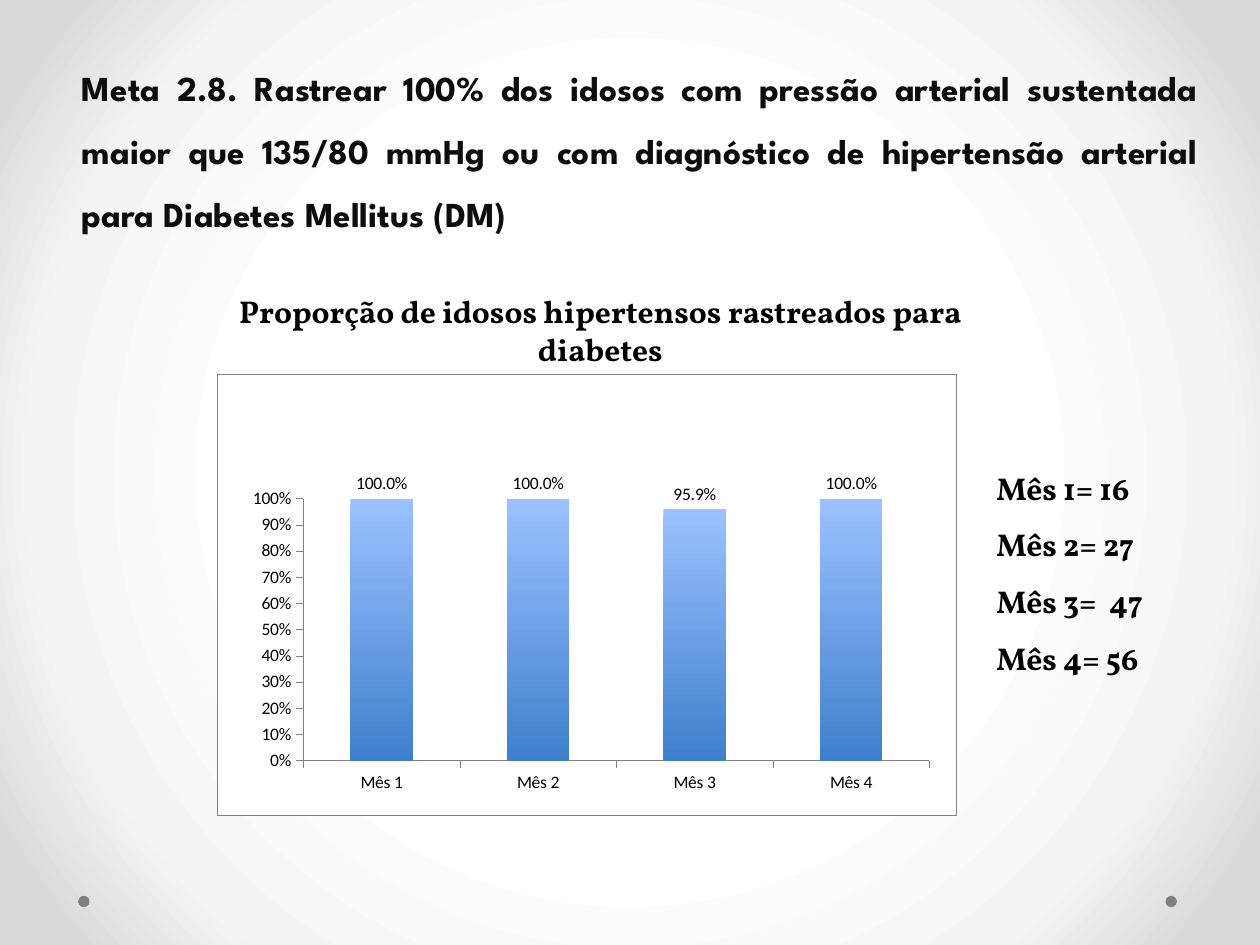
from dataclasses import dataclass
from typing import Any

from lxml import etree
from pptx import Presentation
from pptx.chart.data import CategoryChartData
from pptx.dml.color import RGBColor
from pptx.enum.chart import XL_CHART_TYPE, XL_LABEL_POSITION, XL_TICK_MARK
from pptx.enum.shapes import MSO_SHAPE
from pptx.enum.text import MSO_ANCHOR, MSO_AUTO_SIZE, PP_ALIGN
from pptx.oxml import parse_xml
from pptx.oxml.ns import nsdecls, qn
from pptx.util import Inches, Pt

BARS = XL_CHART_TYPE.COLUMN_CLUSTERED
ABOVE = XL_LABEL_POSITION.OUTSIDE_END
TICK_OUT, TICK_NONE = XL_TICK_MARK.OUTSIDE, XL_TICK_MARK.NONE
OVAL = MSO_SHAPE.OVAL
TOP = MSO_ANCHOR.TOP
GROW = MSO_AUTO_SIZE.SHAPE_TO_FIT_TEXT
LEFT, MID, FULL = PP_ALIGN.LEFT, PP_ALIGN.CENTER, PP_ALIGN.JUSTIFY

COLS, ROWS = 100, 75  # grid of the slide
CELL = Inches(0.1)
INK, GREY, WHITE = "000000", "808080", "FFFFFF"


@dataclass
class Box:
    col: float
    row: float
    wide: float
    high: float

    def spot(self) -> list[int]:
        return [round(n * CELL) for n in (self.col, self.row, self.wide, self.high)]


@dataclass
class Note:
    box: Box
    lines: list[str]
    face: str = "Vollkorn"
    size: int = 18
    ink: str = INK
    align: Any = LEFT
    space: float = 1.0


def tint(code: str) -> RGBColor:
    return RGBColor.from_string(code)


def put(item: Any, form: dict[str, Any]) -> None:
    for name, value in form.items():
        setattr(item, name, value)


def style(font: Any, face: str, size: int, ink: str, bold: bool = False) -> None:
    put(font, {"name": face, "size": Pt(size), "bold": bold})
    font.color.rgb = tint(ink)


def blend(stops: list[tuple[int, str]], course: str) -> Any:
    """Gradient fill from (percent, colour) stops and its direction."""
    marks = "".join(
        f'<a:gs pos="{at * 1000}"><a:srgbClr val="{code}"/></a:gs>'
        for at, code in stops
    )
    return parse_xml(
        f'<a:gradFill {nsdecls("a")} rotWithShape="1">'
        f"<a:gsLst>{marks}</a:gsLst>{course}</a:gradFill>"
    )


def write(shape: Any, note: Note) -> None:
    frame = shape.text_frame
    put(frame, {"word_wrap": True, "vertical_anchor": TOP})
    frame.text = "\n".join(note.lines)
    for para in frame.paragraphs:
        put(para, {"alignment": note.align, "line_spacing": note.space,
                   "space_before": Pt(0)})
        style(para.runs[0].font, note.face, note.size, note.ink, True)


def add_note(slide: Any, note: Note) -> None:
    shape = slide.shapes.add_textbox(*note.box.spot())
    write(shape, note)
    shape.text_frame.auto_size = GROW


def add_dot(slide: Any, box: Box) -> None:
    dot = slide.shapes.add_shape(OVAL, *box.spot())
    dot.shadow.inherit = False
    dot.fill.solid()
    dot.fill.fore_color.rgb = tint(GREY)
    dot.line.fill.background()


def add_goal(slide: Any, note: Note) -> None:
    """Fill the body placeholder, without its bullet."""
    body = slide.placeholders[1]
    put(body, dict(zip(("left", "top", "width", "height"), note.box.spot())))
    write(body, note)
    for para in body.text_frame.paragraphs:
        props = para._p.get_or_add_pPr()
        put_xml = {"marL": "0", "indent": "0"}
        for name, value in put_xml.items():
            props.set(name, value)
        etree.SubElement(props, qn("a:buNone"))


def panel(edge: str) -> Any:
    """White chart area with the given outline."""
    return parse_xml(
        f'<c:spPr {nsdecls("c", "a")}><a:solidFill><a:srgbClr val="{WHITE}"/>'
        f"</a:solidFill>{edge}</c:spPr>"
    )


def add_bars(slide: Any, box: Box, data: dict[str, float], plot: Box) -> None:
    source = CategoryChartData(number_format="0.0%")
    source.categories = list(data)
    source.add_series("Series 1", list(data.values()))
    chart = slide.shapes.add_chart(BARS, *box.spot(), source).chart
    put(chart, {"has_legend": False, "has_title": False})
    style(chart.font, "Calibri", 10, INK)

    # Axes
    for axis in (chart.category_axis, chart.value_axis):
        put(axis, {"major_tick_mark": TICK_OUT, "minor_tick_mark": TICK_NONE,
                   "has_major_gridlines": False})
        style(axis.tick_labels.font, "Calibri", 10, INK)
        axis.format.line.color.rgb = tint(GREY)
        axis.format.line.width = Pt(0.25)
    put(chart.value_axis, {"minimum_scale": 0, "maximum_scale": 1, "major_unit": 0.1})
    put(chart.value_axis.tick_labels,
        {"number_format": "0%", "number_format_is_linked": False})

    # Columns and their labels
    bars = chart.plots[0]
    put(bars, {"gap_width": 150, "vary_by_categories": False, "has_data_labels": True})
    put(bars.data_labels,
        {"show_value": True, "number_format": "0.0%",
         "number_format_is_linked": False, "position": ABOVE})
    style(bars.data_labels.font, "Calibri", 10, INK)
    row = bars.series[0]
    row.invert_if_negative = False
    row._element.get_or_add_spPr().append(
        blend([(0, "9BC1FF"), (100, "3F80CD")], '<a:lin ang="5400000" scaled="0"/>'))

    # Plot place, in percent of the chart, and backgrounds
    area = chart._chartSpace.find(".//" + qn("c:plotArea"))
    for old in area.findall(qn("c:layout")):
        area.remove(old)
    sides = {"x": plot.col, "y": plot.row, "w": plot.wide, "h": plot.high}
    place = "".join(f'<c:{k} val="{v / 100:.3f}"/>' for k, v in sides.items())
    area.insert(0, parse_xml(
        f'<c:layout {nsdecls("c")}><c:manualLayout><c:layoutTarget val="inner"/>'
        f'<c:xMode val="edge"/><c:yMode val="edge"/>{place}'
        "</c:manualLayout></c:layout>"))
    area.append(panel("<a:ln><a:noFill/></a:ln>"))
    chart._chartSpace.find(qn("c:chart")).addnext(panel(
        f'<a:ln w="{Pt(0.25)}"><a:solidFill><a:srgbClr val="{GREY}"/>'
        "</a:solidFill></a:ln>"))


def add_glow(slide: Any) -> None:
    slide.background.fill.solid()
    base = slide._element.find(".//" + qn("p:bgPr"))
    base.replace(base[0], blend(
        [(50, WHITE), (76, "F4F4F4"), (92, "DADADA")],
        '<a:path path="circle"><a:fillToRect l="50000" t="50000" r="50000" '
        'b="50000"/></a:path>'))


GOAL = Note(
    Box(5.5, 3.1, 90.6, 17.2),
    ["Meta 2.8. Rastrear 100% dos idosos com pressão arterial sustentada maior que "
     "135/80 mmHg ou com diagnóstico de hipertensão arterial para Diabetes "
     "Mellitus (DM)"],
    "League Spartan", 20, "0D0D0D", FULL, 1.5)
NOTES = [
    Note(Box(17.2, 22.7, 60.9, 10.1),
         ["Proporção de idosos hipertensos rastreados para diabetes"], align=MID),
    Note(Box(78.1, 35.2, 18, 19.2),
         ["Mês 1= 16", "Mês 2= 27", "Mês 3=  47", "Mês 4= 56"], space=1.5),
]
RATES = {"Mês 1": 1, "Mês 2": 1, "Mês 3": 0.959, "Mês 4": 1}


def main() -> None:
    deck = Presentation()
    put(deck, {"slide_width": COLS * CELL, "slide_height": ROWS * CELL})
    slide = deck.slides.add_slide(deck.slide_layouts[1])
    title = slide.shapes.title._element
    title.getparent().remove(title)

    add_glow(slide)
    for col in (92.5, 6.2):
        add_dot(slide, Box(col, 71.1, 0.9, 0.9))
    add_goal(slide, GOAL)
    add_bars(slide, Box(17.2, 29.7, 58.7, 35), RATES, Box(11.7, 28.2, 84.7, 59.5))
    for note in NOTES:
        add_note(slide, note)
    deck.save("out.pptx")


if __name__ == "__main__":
    main()
